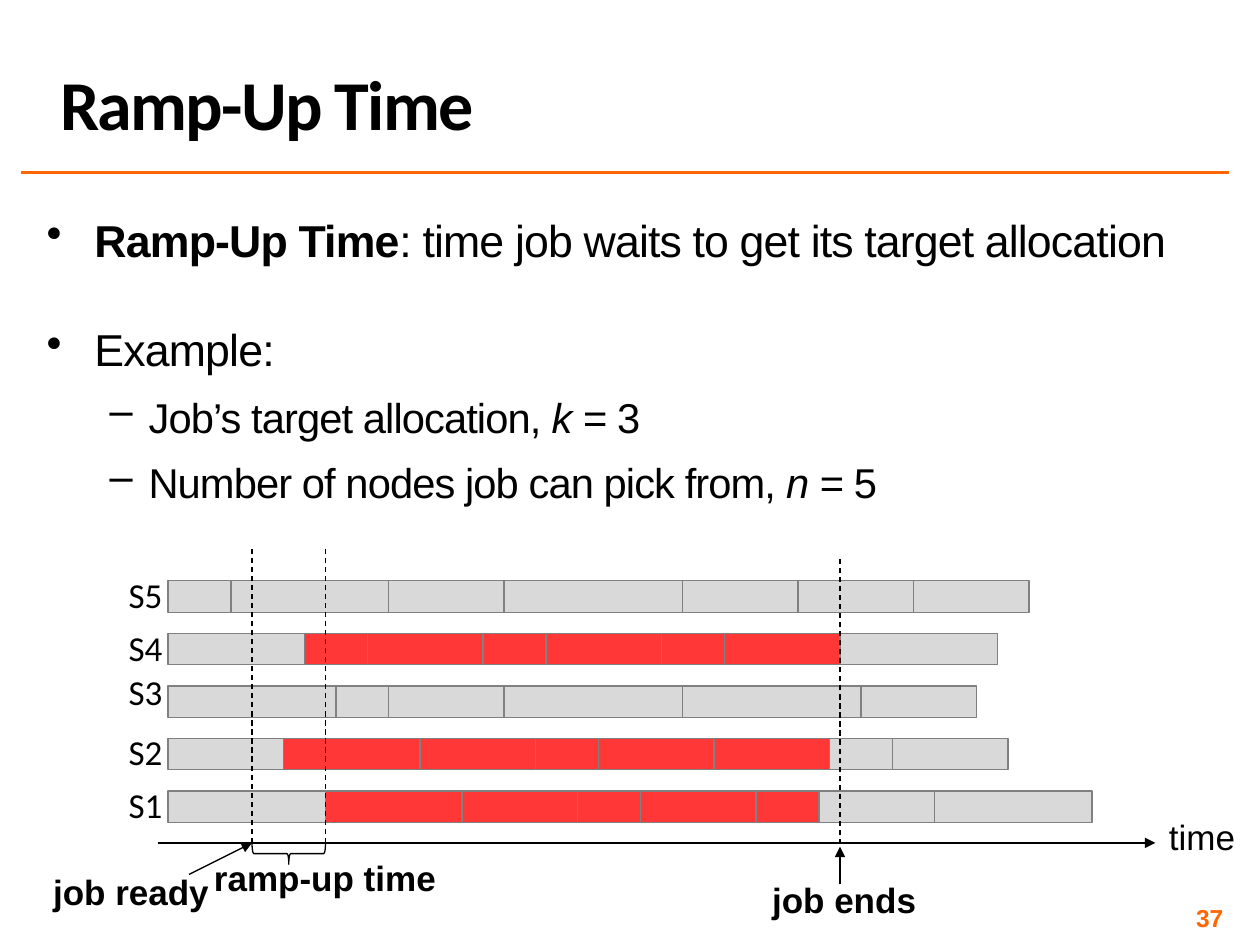
import pptx
import pptx.util
import pptx.dml.color
import pptx.enum.dml
import pptx.enum.shapes
import pptx.enum.text
import pptx.oxml

Inches, Pt = pptx.util.Inches, pptx.util.Pt
RGB = pptx.dml.color.RGBColor.from_string
ALIGN = pptx.enum.text.PP_ALIGN
ANCHOR = pptx.enum.text.MSO_ANCHOR
SHAPE = pptx.enum.shapes.MSO_SHAPE

THEME = {
    "text": "000000", "accent": "FF6600",
    "other": "D9D9D9", "job": "FF3737", "edge": "808080",
    "head": "Calibri", "body": "Arial",
    "title": 40, "bullet": 25.5, "sub": 23.8, "label": 20, "number": 14,
}

# Content
TITLE = "Ramp-Up Time"
BULLETS = [  # level, runs of (text, style)
    (0, [("Ramp-Up Time", "b"), (": time job waits to get its target allocation", "")]),
    (0, [("Example:", "")]),
    (1, [("Job’s target allocation, ", ""), ("k", "i"), (" = 3", "")]),
    (1, [("Number of nodes job can pick from, ", ""), ("n ", "i"), ("= 5", "")]),
]
LEVELS = [  # per level: bullet, indent, hanging, line spacing, space before, size
    ("•", 0.38, 0.38, 0.8, 30, THEME["bullet"]),
    ("–", 0.81, 0.31, 0.75, 8, THEME["sub"]),
]
SERVERS = [  # name, label top, task lengths in ticks: before, by the job, after
    ("S5", 4.5, [6, 15, 11, 17, 11, 11, 11], [], []),
    ("S4", 4.92, [13], [6, 11, 6, 11, 6, 11], [15]),
    ("S3", 5.27, [16, 5, 11, 17, 17, 11], [], []),
    ("S2", 5.75, [11], [13, 11, 6, 11, 11], [6, 11]),
    ("S1", 6.17, [15], [13, 11, 6, 11, 6], [11, 15]),
]
CAPTIONS = [  # text, left, top, width, bold
    ("time", 9.16, 6.42, 0.76, False),
    ("job ready", 0.25, 6.86, 1.58, True),
    ("job ends", 6, 6.92, 1.4, True),
    ("ramp-up time", 1.58, 6.75, 2, True),
]

# Timeline geometry
TICK = 1 / 12
BAR_X, BAR_Y, BAR_H, PITCH = 16 * TICK, 4.61, 0.25, 5 * TICK
AXIS_Y = 6.69
READY, RAMPED, ENDS = 2, 31 * TICK, 80 * TICK

prs = pptx.Presentation()
prs.slide_width, prs.slide_height = Inches(10), Inches(7.5)
s = prs.slides.add_slide(prs.slide_layouts[6])


def add_text(text, x, y, w, h, size, font=THEME["body"], color=THEME["text"],
             bold=False, align=ALIGN.CENTER, anchor=ANCHOR.TOP, wrap=True):
    tf = s.shapes.add_textbox(Inches(x), Inches(y), Inches(w), Inches(h)).text_frame
    tf.word_wrap, tf.vertical_anchor = wrap, anchor
    p = tf.paragraphs[0]
    p.text, p.alignment = text, align
    p.font.size, p.font.name, p.font.bold = Pt(size), font, bold
    p.font.color.rgb = RGB(color)
    return tf


def set_insets(tf, inset):
    tf.margin_left = tf.margin_right = tf.margin_top = tf.margin_bottom = Inches(inset)


def add_line(x1, y1, x2, y2, color=THEME["text"], width=0.75, dash=False, arrow=False):
    c = s.shapes.add_connector(pptx.enum.shapes.MSO_CONNECTOR.STRAIGHT,
                               Inches(x1), Inches(y1), Inches(x2), Inches(y2))
    c.line.color.rgb, c.line.width = RGB(color), Pt(width)
    if dash:
        c.line.dash_style = pptx.enum.dml.MSO_LINE.DASH
    if arrow:
        add_xml(c.line._get_or_add_ln(), "tailEnd", type="triangle")
    add_xml(c._element.spPr, "effectLst")


def add_xml(parent, tag, **attrs):
    el = parent.makeelement(pptx.oxml.ns.qn("a:" + tag), attrs)
    parent.append(el)


def add_shape(kind, x, y, w, h, line, fill=None):
    sp = s.shapes.add_shape(kind, Inches(x), Inches(y), Inches(w), Inches(h))
    sp.shadow.inherit = False
    sp.line.color.rgb, sp.line.width = RGB(line), Pt(0.75)
    if fill:
        sp.fill.solid()
        sp.fill.fore_color.rgb = RGB(fill)
    else:
        sp.fill.background()
    return sp


# Title and rule
add_line(0.17, 1.37, 9.75, 1.37, THEME["accent"], 2)
tf = add_text(TITLE, 0.38, 0.02, 9.37, 1.17, THEME["title"], THEME["head"],
              bold=True, align=ALIGN.LEFT, anchor=ANCHOR.BOTTOM)
tf.paragraphs[0].line_spacing = 0.8
tf.paragraphs[0].runs[0].font._element.set("spc", "-100")

# Bullets
tf = s.shapes.add_textbox(Inches(0.33), Inches(1.73), Inches(9.67), Inches(2.42)).text_frame
tf.word_wrap = True
set_insets(tf, 0.04)
for i, (level, runs) in enumerate(BULLETS):
    bullet, indent, hanging, spacing, before, size = LEVELS[level]
    p = tf.add_paragraph() if i else tf.paragraphs[0]
    p.level, p.line_spacing = level, spacing
    p.space_before, p.space_after = Pt(before), Pt(8)
    p.font.size, p.font.name = Pt(size), THEME["body"]
    p.font.color.rgb = RGB(THEME["text"])
    pPr = p._p.get_or_add_pPr()
    pPr.set("marL", str(Inches(indent)))
    pPr.set("indent", str(-Inches(hanging)))
    pPr.insert_element_before(
        pptx.oxml.parse_xml('<a:buChar %s char="%s"/>' % (pptx.oxml.ns.nsdecls("a"), bullet)),
        "a:tabLst", "a:defRPr", "a:extLst")
    for text, style in runs:
        r = p.add_run()
        r.text = text
        r.font.bold, r.font.italic = style == "b", style == "i"
        r.font._element.set("spc", "-50")

# Server rows
for row, (name, label_y, before, job, after) in enumerate(SERVERS):
    add_text(name, 0.92, label_y, 0.47, 0.44, THEME["label"], THEME["head"], wrap=False)
    x = BAR_X
    for kind, tasks in (("other", before), ("job", job), ("other", after)):
        for ticks in tasks:
            add_shape(SHAPE.RECTANGLE, x, BAR_Y + row * PITCH, ticks * TICK, BAR_H,
                      THEME["edge"], THEME[kind])
            x += ticks * TICK

# Time axis, event markers and ramp-up brace
add_line(1.25, AXIS_Y, 9.17, AXIS_Y, arrow=True)
add_line(1.5, 6.94, READY, AXIS_Y, arrow=True)
add_line(ENDS, 7.02, ENDS, 6.72, arrow=True)
for x, bottom, top in ((READY, AXIS_Y, 4.36), (RAMPED, AXIS_Y, 4.36), (ENDS, 6.77, 4.44)):
    add_line(x, bottom, x, top, dash=True)
span, depth = RAMPED - READY, 0.17
brace = add_shape(SHAPE.RIGHT_BRACE, (READY + RAMPED - depth) / 2,
                  AXIS_Y + (depth - span) / 2, depth, span, THEME["text"])
brace.rotation = 90
brace.adjustments[0] = 0.08

# Captions and slide number
for text, x, y, w, bold in CAPTIONS:
    add_text(text, x, y, w, 0.44, THEME["label"], bold=bold)
tf = add_text("37", 7.42, 7.17, 2.33, 0.23, THEME["number"], color=THEME["accent"],
              bold=True, align=ALIGN.RIGHT, anchor=ANCHOR.MIDDLE)
set_insets(tf, 0.04)

prs.save("out.pptx")
